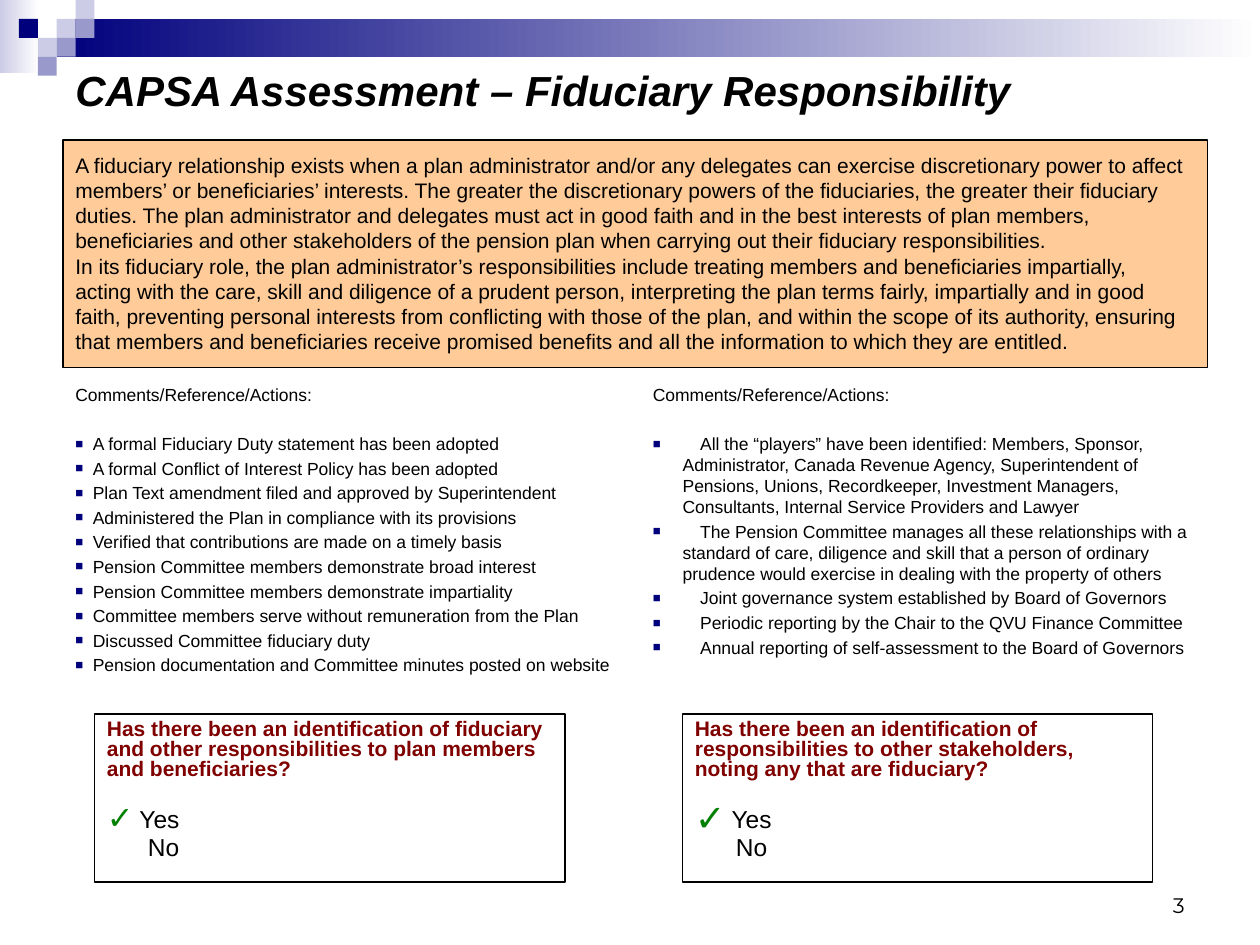
from dataclasses import dataclass

from pptx import Presentation
from pptx.dml.color import RGBColor as RGB
from pptx.enum.shapes import MSO_SHAPE as Kind
from pptx.enum.text import MSO_ANCHOR as Anchor, PP_ALIGN as Align
from pptx.oxml.ns import qn
from pptx.util import Pt
from lxml.etree import SubElement as Sub


@dataclass(frozen=True)
class Theme:
    font: str = "Arial"
    page: str = "Montserrat"
    black: str = "000000"
    white: str = "FFFFFF"
    navy: str = "00007D"
    mauve: str = "9999CC"
    pale: str = "CCCCE6"
    peach: str = "FFCC99"
    red: str = "800000"
    green: str = "008000"
    title: int = 24
    reply: int = 14
    body: int = 12
    list: int = 10


T = Theme()
HEAD = "Comments/Reference/Actions:"
INTRO = [
    "A fiduciary relationship exists when a plan administrator and/or any delegates can exercise "
    "discretionary power to affect members’ or beneficiaries’ interests. The greater the discretionary "
    "powers of the fiduciaries, the greater their fiduciary duties. The plan administrator and delegates "
    "must act in good faith and in the best interests of plan members, beneficiaries and other "
    "stakeholders of the pension plan when carrying out their fiduciary responsibilities.",
    "In its fiduciary role, the plan administrator’s responsibilities include treating members and "
    "beneficiaries impartially,",
    "acting with the care, skill and diligence of a prudent person, interpreting the plan terms fairly, "
    "impartially and in good faith, preventing personal interests from conflicting with those of the plan, "
    "and within the scope of its authority, ensuring that members and beneficiaries receive promised "
    "benefits and all the information to which they are entitled.",
]
DUTIES = [
    "A formal Fiduciary Duty statement has been adopted",
    "A formal Conflict of Interest Policy has been adopted",
    "Plan Text amendment filed and approved by Superintendent",
    "Administered the Plan in compliance with its provisions",
    "Verified that contributions are made on a timely basis",
    "Pension Committee members demonstrate broad interest",
    "Pension Committee members demonstrate impartiality",
    "Committee members serve without remuneration from the Plan",
    "Discussed Committee fiduciary duty",
    "Pension documentation and Committee minutes posted on website",
]
PLAYERS = [
    "\tAll the “players” have been identified: Members, Sponsor, Administrator, Canada Revenue Agency, "
    "Superintendent of Pensions, Unions, Recordkeeper, Investment Managers, Consultants, Internal Service "
    "Providers and Lawyer",
    "\tThe Pension Committee manages all these relationships with a standard of care, diligence and skill "
    "that a person of ordinary prudence would exercise in dealing with the property of others",
    "\tJoint governance system established by Board of Governors",
    "\tPeriodic reporting by the Chair to the QVU Finance Committee",
    "\tAnnual reporting of self-assessment to the Board of Governors",
]


def add_rect(slide, x, y, w, h, fill=None, fade=False, line=None):
    box = slide.shapes.add_shape(Kind.RECTANGLE, Pt(x), Pt(y), Pt(w), Pt(h))
    box.shadow.inherit = False
    if fade:
        box.fill.gradient()
        box.fill.gradient_angle = 0
        for stop, tone in zip(box.fill.gradient_stops, (fill, T.white)):
            stop.color.rgb = RGB.from_string(tone)
    elif fill:
        box.fill.solid()
        box.fill.fore_color.rgb = RGB.from_string(fill)
    else:
        box.fill.background()
    if line:
        box.line.color.rgb = RGB.from_string(line)
        box.line.width = Pt(0.75)
    else:
        box.line.fill.background()
    return box


def add_box(slide, x, y, w, h):
    return slide.shapes.add_textbox(Pt(x), Pt(y), Pt(w), Pt(h))


def set_frame(box, anchor=Anchor.TOP):
    frame = box.text_frame
    frame.word_wrap = True
    frame.vertical_anchor = anchor
    return frame


def add_para(frame, text, size, tone=T.black, font=T.font, bold=False, gap=0, lead=None):
    para = frame.paragraphs[0]
    if para.runs:
        para = frame.add_paragraph()
    para.add_run().text = text
    para.alignment = Align.LEFT
    para.space_before = Pt(gap)
    if lead:
        para.line_spacing = lead
    para.font.size, para.font.name, para.font.bold = Pt(size), font, bold
    para.font.color.rgb = RGB.from_string(tone)
    return para


def set_mark(para, mark, tone, scale, hang, tabs=()):
    props = para._p.get_or_add_pPr()
    props.set("marL", str(Pt(hang)))
    props.set("indent", str(-Pt(hang)))
    color = Sub(props, qn("a:buClr"))
    Sub(color, qn("a:srgbClr"), val=tone)
    Sub(props, qn("a:buSzPct"), val=str(scale * 1000))
    Sub(props, qn("a:buFont"), typeface=T.font)
    Sub(props, qn("a:buChar"), char=mark)
    if tabs:
        stops = Sub(props, qn("a:tabLst"))
        for tab in tabs:
            Sub(stops, qn("a:tab"), pos=str(Pt(tab)), algn="l")
    # Run defaults close the paragraph properties
    props.append(props.find(qn("a:defRPr")))


def add_list(slide, x, w, items, hang, tabs=()):
    frame = set_frame(add_box(slide, x, 216, w, 180))
    add_para(frame, HEAD, T.list)
    for i, item in enumerate(items):
        para = add_para(frame, item, T.list, gap=2 if i else 16)
        set_mark(para, "■", T.navy, 75, hang, tabs)


def add_check(slide, x, text, scale, hang):
    frame = set_frame(add_rect(slide, x, 408, 268.8, 96, line=T.black))
    add_para(frame, text, T.body, T.red, bold=True, lead=0.8)
    yes = add_para(frame, "Yes", T.reply, gap=16.6, lead=0.8)
    set_mark(yes, "✓", T.green, scale, hang)
    no = add_para(frame, "No", T.reply, gap=2.8, lead=0.8)
    no._p.get_or_add_pPr().set("marL", str(Pt(23.4)))


def add_band(slide):
    add_rect(slide, 0, 0, 22.3, 41.8, T.pale, fade=True)
    add_rect(slide, 32.4, 10.8, 687.6, 21.6, T.navy, fade=True)
    unit = 10.8
    tiles = [(3, 1, T.pale), (4, 0, T.pale), (4, 1, T.mauve), (2, 2, T.pale),
             (1, 1, T.navy), (3, 2, T.mauve), (2, 3, T.mauve)]
    for col, row, tone in tiles:
        add_rect(slide, col * unit, row * unit, unit, unit, tone)


def main():
    deck = Presentation()
    deck.slide_width, deck.slide_height = Pt(720), Pt(540)
    slide = deck.slides.add_slide(deck.slide_layouts[6])
    add_band(slide)

    # Page number and title
    frame = set_frame(add_box(slide, 516, 492, 168, 36), Anchor.BOTTOM)
    add_para(frame, "3", T.body, font=T.page).alignment = Align.RIGHT
    frame = set_frame(add_box(slide, 36, 36, 648, 30), Anchor.MIDDLE)
    title = add_para(frame, "CAPSA Assessment – Fiduciary Responsibility", T.title, bold=True)
    title.font.italic = True

    # Definition
    frame = set_frame(add_rect(slide, 36, 80, 654, 130.2, T.peach, line=T.black))
    frame.margin_top = Pt(7)
    for text in INTRO:
        add_para(frame, text, T.body)

    # Comments
    add_list(slide, 36, 324, DUTIES, 10)
    add_list(slide, 366, 328, PLAYERS, 17, tabs=(10, 27))

    # Questions
    add_check(slide, 54, "Has there been an identification of fiduciary and other "
              "responsibilities to plan members and beneficiaries?", 130, 18.6)
    add_check(slide, 390, "Has there been an identification of responsibilities to other "
              "stakeholders, noting any that are fiduciary?", 150, 21)
    deck.save("out.pptx")


if __name__ == "__main__":
    main()
